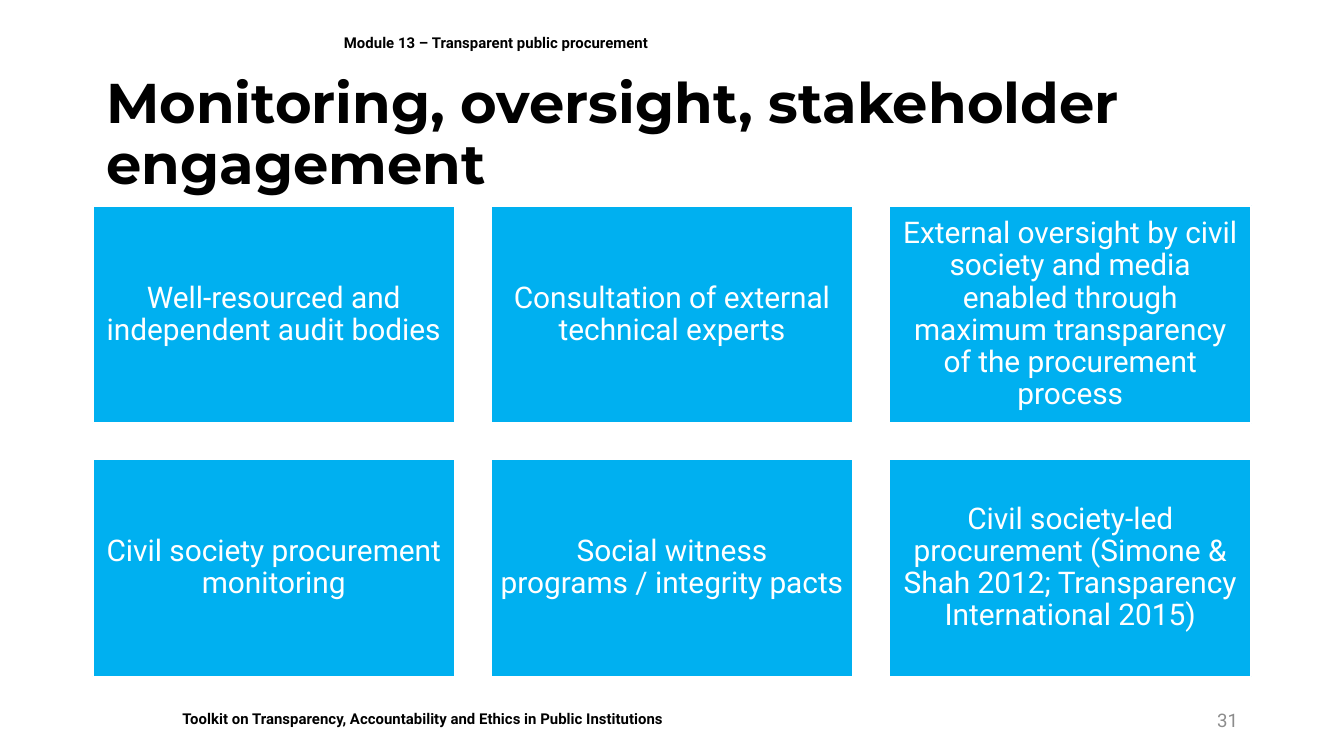
import pptx
import pptx.util
import pptx.dml.color
import pptx.enum.shapes
import pptx.enum.text

Cm = pptx.util.Cm
Pt = pptx.util.Pt
ALIGN = pptx.enum.text.PP_ALIGN
ANCHOR = pptx.enum.text.MSO_ANCHOR

HUES = {"ink": "000000", "paper": "FFFFFF", "tile": "00B0F0", "page": "8C8C8C"}
TOPICS = [
    "Well-resourced and independent audit bodies",
    "Consultation of external technical experts",
    "External oversight by civil society and media enabled through maximum "
    "transparency of the procurement process",
    "Civil society procurement monitoring",
    "Social witness programs / integrity pacts",
    "Civil society-led procurement (Simone & Shah 2012; "
    "Transparency International 2015)",
]


def hue(name):
    return pptx.dml.color.RGBColor.from_string(HUES[name])


def write(shape, text, size, color, bold=False, font="Roboto",
          align=ALIGN.LEFT, anchor=ANCHOR.MIDDLE, lines=1.0):
    frame = shape.text_frame
    frame.word_wrap = True
    frame.auto_size = pptx.enum.text.MSO_AUTO_SIZE.NONE
    frame.vertical_anchor = anchor
    frame.text = text
    para = frame.paragraphs[0]
    para.alignment = align
    para.line_spacing = lines
    run = para.runs[0].font
    run.name, run.size, run.bold = font, Pt(size), bold
    run.color.rgb = hue(color)


def add_note(slide, box, text, size, color, **style):
    """Small line of text in a box given in centimetres."""
    shape = slide.shapes.add_textbox(*map(Cm, box))
    write(shape, text, size, color, **style)


def set_title(slide, box, text):
    title = slide.shapes.title
    title.left, title.top, title.width, title.height = map(Cm, box)
    write(title, text, 30, "ink", bold=True, font="Montserrat", lines=0.9)


def add_tile(slide, box, text):
    tile = slide.shapes.add_shape(
        pptx.enum.shapes.MSO_SHAPE.RECTANGLE, *map(Cm, box))
    tile.shadow.inherit = False
    tile.fill.solid()
    tile.fill.fore_color.rgb = hue("tile")
    tile.line.color.rgb = hue("paper")
    tile.line.width = Pt(1)
    frame = tile.text_frame
    frame.margin_left = frame.margin_right = Cm(0.17)
    frame.margin_top = frame.margin_bottom = Cm(0.17)
    write(tile, text, 16, "paper", align=ALIGN.CENTER, lines=0.9)


def add_grid(slide, box, topics, cols=3, gap=0.68):
    left, top, width, height = box
    rows = len(topics) // cols
    wide = (width - gap * (cols - 1)) / cols
    high = (height - gap * (rows - 1)) / rows
    for i, topic in enumerate(topics):
        row, col = divmod(i, cols)
        spot = (left + col * (wide + gap), top + row * (high + gap), wide, high)
        add_tile(slide, spot, topic)


def main():
    deck = pptx.Presentation()
    deck.slide_width, deck.slide_height = Cm(25.4), Cm(14.29)
    slide = deck.slides.add_slide(deck.slide_layouts.get_by_name("Title Only"))
    add_note(slide, (3.2, 13.28, 18.2, 0.6),
             "Toolkit on Transparency, Accountability and Ethics in Public Institutions",
             8, "ink", bold=True, anchor=ANCHOR.TOP)
    add_note(slide, (6.25, 0.25, 17.4, 1.12),
             "Module 13 – Transparent public procurement", 8, "ink", bold=True)
    add_note(slide, (17.93, 13.24, 5.72, 0.76), "31", 10, "page",
             align=ALIGN.RIGHT)
    set_title(slide, (1.75, 1.62, 21.9, 1.9),
              "Monitoring, oversight, stakeholder engagement")
    add_grid(slide, (1.75, 3.89, 21.9, 8.9), TOPICS)
    deck.save("out.pptx")


if __name__ == "__main__":
    main()
